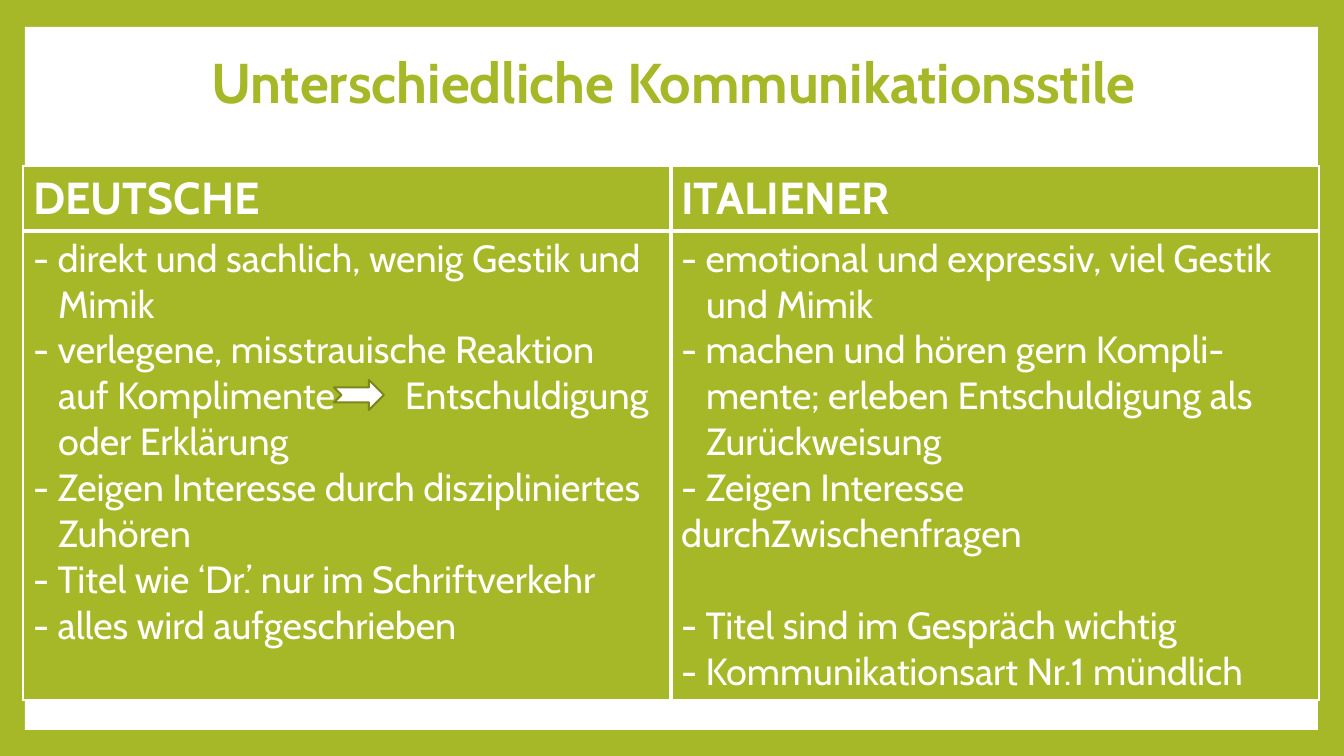
from lxml import etree
from pptx import Presentation
from pptx.dml.color import RGBColor
from pptx.enum.shapes import MSO_SHAPE
from pptx.enum.text import MSO_ANCHOR, MSO_AUTO_SIZE, PP_ALIGN
from pptx.oxml.ns import qn
from pptx.util import Pt

RECT = MSO_SHAPE.RECTANGLE
ARROW = MSO_SHAPE.NOTCHED_RIGHT_ARROW
TOP = MSO_ANCHOR.TOP
CENTER = PP_ALIGN.CENTER
NO_FIT = MSO_AUTO_SIZE.NONE
PX = 914400 / 100.8
GREEN, WHITE, OLIVE = "A6B727", "FFFFFF", "7B871D"
INDENT = 25


def px(*vals):
    return [round(val * PX) for val in vals]


def paint(item, color):
    if hasattr(item, "solid"):
        item.solid()
        item = item.fore_color
    item.rgb = RGBColor.from_string(color)


deck = Presentation()
deck.slide_width, deck.slide_height = px(1344, 756)
slide = deck.slides.add_slide(deck.slide_layouts[5])
paint(slide.background.fill, GREEN)

panel = slide.shapes.add_shape(RECT, *px(25, 27, 1293, 703))
panel.shadow.inherit = False
paint(panel.fill, WHITE)
panel.line.fill.background()

title = slide.shapes.title
panel.element.addnext(title.element)
title.left, title.top, title.width, title.height = px(57, 50, 1228, 608)
frame = title.text_frame
frame.text = "Unterschiedliche Kommunikationsstile"
frame.word_wrap = True
frame.auto_size = NO_FIT
frame.vertical_anchor = TOP
frame.margin_left = px(15)[0]
head = frame.paragraphs[0]
head.alignment = CENTER
head.line_spacing = 0.9
font = head.runs[0].font
font.name, font.size, font.bold = "Cabin", Pt(40), True
paint(font.color, GREEN)

rows = [
    [["DEUTSCHE"], ["ITALIENER"]],
    [
        [
            "- direkt und sachlich, wenig Gestik und",
            "Mimik",
            "- verlegene, misstrauische Reaktion",
            "auf Komplimente Entschuldigung",
            "oder Erklärung",
            "- Zeigen Interesse durch diszipliniertes",
            "Zuhören",
            "- Titel wie ‘Dr.’ nur im Schriftverkehr",
            "- alles wird aufgeschrieben",
        ],
        [
            "- emotional und expressiv, viel Gestik",
            "und Mimik",
            "- machen und hören gern Kompli-",
            "mente; erleben Entschuldigung als",
            "Zurückweisung",
            "- Zeigen Interesse durchZwischenfragen",
            "- Titel sind im Gespräch wichtig",
            "- Kommunikationsart Nr.1 mündlich",
        ],
    ],
]
table = slide.shapes.add_table(2, 2, *px(23, 166, 1296, 492)).table
for col in table.columns:
    col.width = px(648)[0]
for row, high in zip(table.rows, px(64, 428)):
    row.height = high

for r, row in enumerate(rows):
    for c, lines in enumerate(row):
        cell = table.cell(r, c)
        props = cell._tc.get_or_add_tcPr()
        sides = {"lnL": c == 1, "lnR": c == 0, "lnT": r == 1, "lnB": r == 0}
        for side, inner in sides.items():
            edge = etree.SubElement(props, qn("a:" + side), w=str(Pt(3 if inner else 1)))
            fill = etree.SubElement(edge, qn("a:solidFill"))
            etree.SubElement(fill, qn("a:srgbClr"), val=WHITE)
        paint(cell.fill, GREEN)
        frame = cell.text_frame
        frame.text = "\n".join(lines)
        for para in frame.paragraphs:
            text = para.text
            if r == 1 and not text.startswith("- "):
                para._p.get_or_add_pPr().set("marL", str(px(INDENT)[0]))
            if text.startswith("auf"):
                first, last = text.rsplit(" ", 1)
                para.text = first
                gap = para.add_run()
                gap.text = " "
                gap.font._element.set("spc", "4400")
                para.add_run().text = last
            if text.startswith("- Titel sind"):
                para.space_before = Pt(33)
            for run in para.runs:
                font = run.font
                font.name, font.size, font.bold = "Cabin", Pt(27 if r else 32), r == 0
                paint(font.color, WHITE)

arrow = slide.shapes.add_shape(ARROW, *px(334, 380, 50, 30))
arrow.shadow.inherit = False
paint(arrow.fill, WHITE)
paint(arrow.line.color, OLIVE)
arrow.line.width = Pt(1.5)

deck.save("out.pptx")
